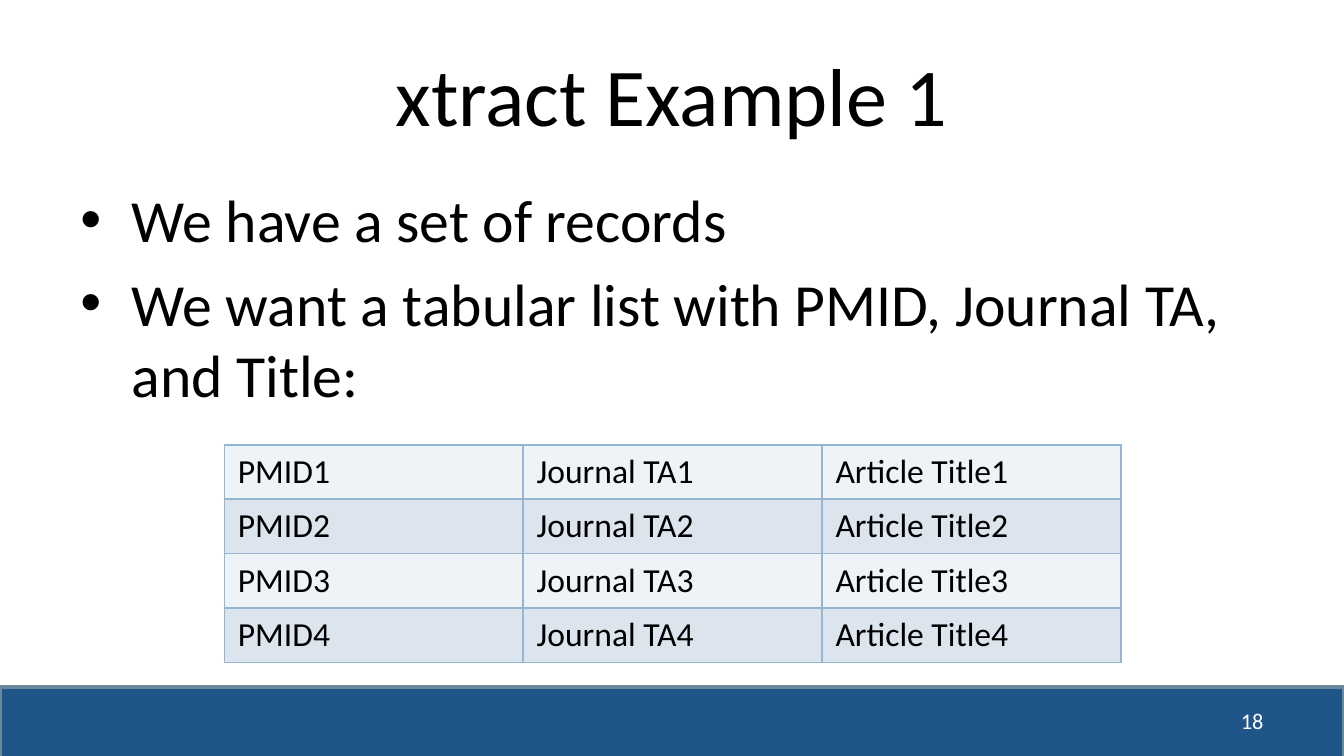
from lxml import etree
from pptx import Presentation
from pptx import util as u
from pptx.dml.color import RGBColor
from pptx.enum import shapes, text
from pptx.oxml import ns

W = u.Inches(10)
H = W * 9 // 16
FONT = "Calibri"
COLORS = {
    "ink": "000000",
    "white": "FFFFFF",
    "bar": "20558A",
    "bar_line": "6D879B",
    "border": "94B6D2",
    "band_light": "EEF3F7",
    "band_dark": "DCE5EE",
}
BULLETS = [
    "We have a set of records",
    "We want a tabular list with PMID, Journal TA, and Title:",
]
FIELDS = ["PMID", "Journal TA", "Article Title"]
RECORDS = 4


def rgb(name):
    return RGBColor.from_string(COLORS[name])


def box(x, y, w, h):
    return [int(W * share / 100) for share in (x, y, w, h)]


def add_run(p, words, size, color="ink"):
    r = p.add_run()
    r.text = words
    r.font.name = FONT
    r.font.size = u.Pt(size)
    r.font.color.rgb = rgb(color)


def add_frame(s, place, anchor):
    tf = s.shapes.add_textbox(*place).text_frame
    tf.word_wrap = True
    tf.vertical_anchor = anchor
    return tf


def add_line(s, words, place, size, align, color="ink"):
    p = add_frame(s, place, text.MSO_ANCHOR.MIDDLE).paragraphs[0]
    p.alignment = align
    add_run(p, words, size, color)


def add_bullets(s, items, place, size):
    tf = add_frame(s, place, text.MSO_ANCHOR.TOP)
    indent = u.Inches(0.38)
    for i, item in enumerate(items):
        p = tf.add_paragraph() if i else tf.paragraphs[0]
        pPr = p._p.get_or_add_pPr()
        pPr.set("marL", str(indent))
        pPr.set("indent", str(-indent))
        etree.SubElement(pPr, ns.qn("a:buFont"), typeface="Arial")
        etree.SubElement(pPr, ns.qn("a:buChar"), char="•")
        if i:
            p.space_before = u.Pt(size * 0.2)
        add_run(p, item, size)


def add_bar(s, place):
    sp = s.shapes.add_shape(shapes.MSO_SHAPE.RECTANGLE, *place)
    sp.shadow.inherit = False
    sp.fill.solid()
    sp.fill.fore_color.rgb = rgb("bar")
    sp.line.color.rgb = rgb("bar_line")
    sp.line.width = u.Pt(2)


def set_borders(cell):
    tcPr = cell._tc.get_or_add_tcPr()
    for side in ("lnL", "lnR", "lnT", "lnB"):
        ln = etree.SubElement(tcPr, ns.qn(f"a:{side}"), w=str(u.Pt(1)))
        fill = etree.SubElement(ln, ns.qn("a:solidFill"))
        etree.SubElement(fill, ns.qn("a:srgbClr"), val=COLORS["border"])


def add_records(s, place, size):
    table = s.shapes.add_table(RECORDS, len(FIELDS), *place).table
    table.first_row = False
    for row in range(RECORDS):
        for col, field in enumerate(FIELDS):
            cell = table.cell(row, col)
            set_borders(cell)
            cell.fill.solid()
            cell.fill.fore_color.rgb = rgb("band_dark" if row % 2 else "band_light")
            add_run(cell.text_frame.paragraphs[0], f"{field}{row + 1}", size)


def main():
    prs = Presentation()
    prs.slide_width, prs.slide_height = W, H
    s = prs.slides.add_slide(prs.slide_layouts[6])
    s.background.fill.solid()
    s.background.fill.fore_color.rgb = rgb("white")
    add_bar(s, box(0, 51.1, 100, 5.8))
    add_line(s, "xtract Example 1", box(5, 2.3, 90, 9.4), 44, text.PP_ALIGN.CENTER)
    add_bullets(s, BULLETS, box(5, 13.1, 90, 37.1), 32)
    add_line(s, "18", box(71.7, 52.1, 23.3, 3), 12, text.PP_ALIGN.RIGHT, "white")
    add_records(s, box(16.7, 33.1, 66.7, 16.2), 18)
    prs.save("out.pptx")


if __name__ == "__main__":
    main()
